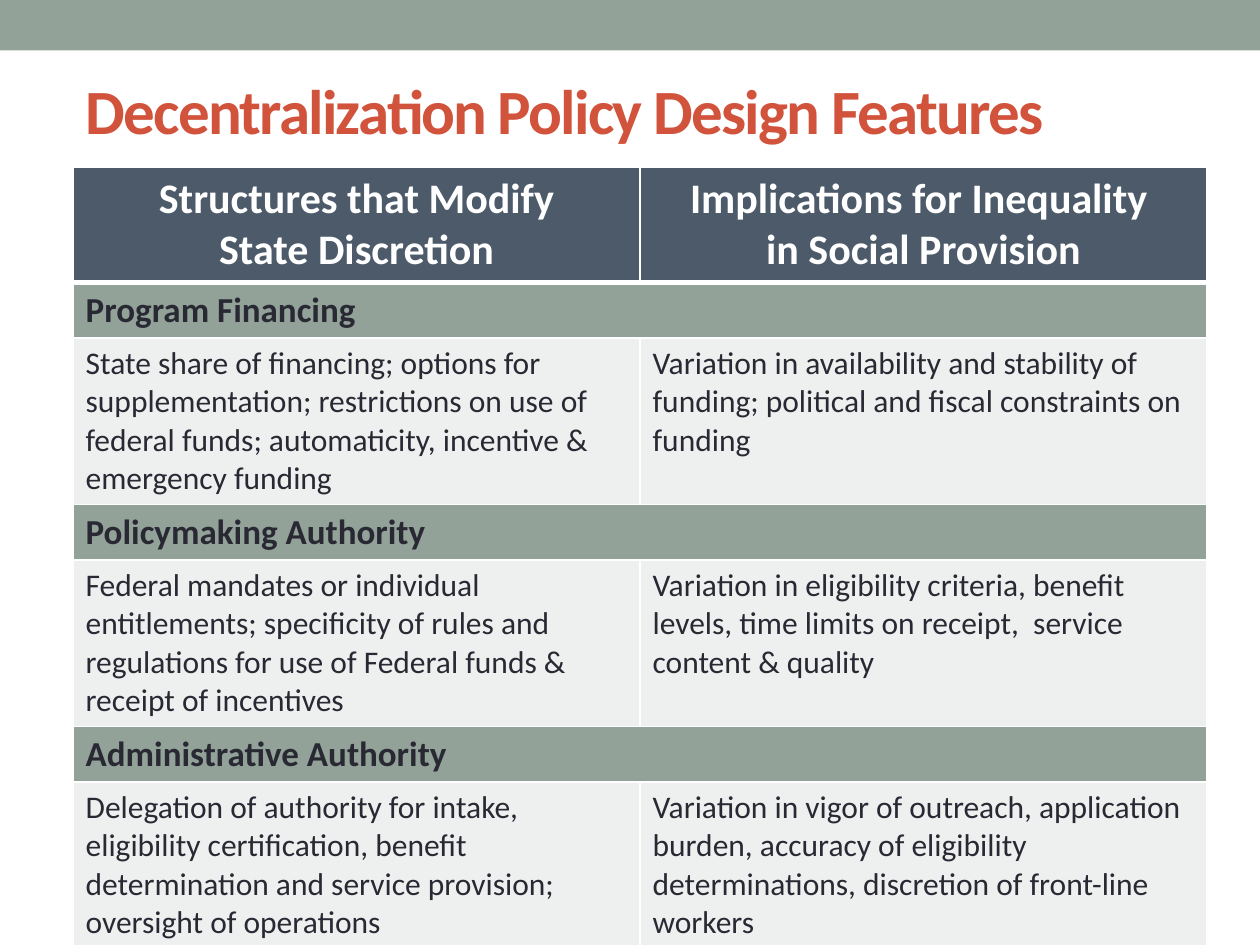
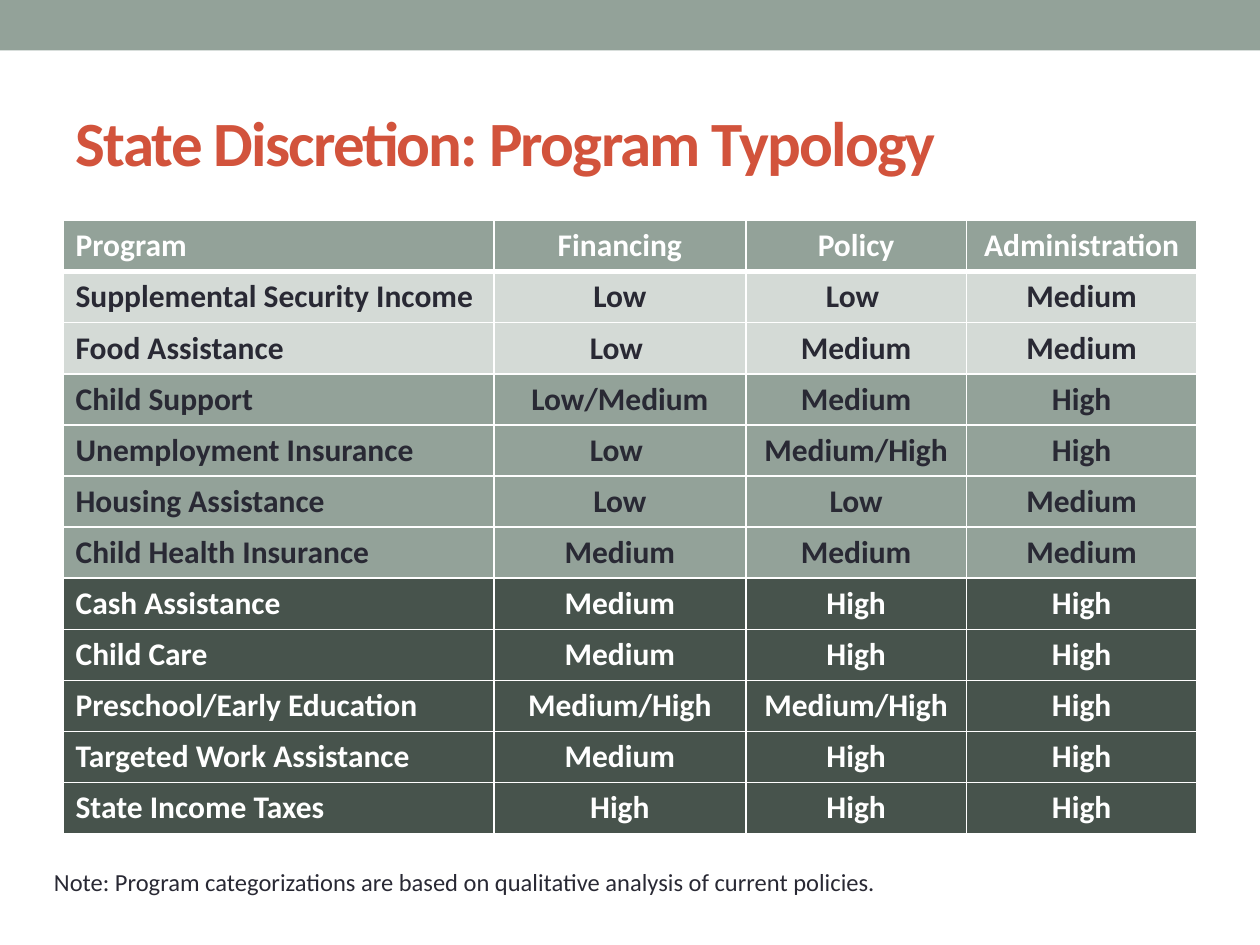
from lxml import etree
from pptx import Presentation
from pptx import util as u
from pptx.dml.color import RGBColor
from pptx.enum import shapes, text
from pptx.oxml import ns

FONT = "Calibri"
WHITE, INK, RED = "FFFFFF", "292934", "D2533C"
SAGE, PALE, MIST, MOSS, SLATE = "93A299", "D4DAD6", "EEF0EF", "47534C", "4C5A6A"
LEFT, MID = text.PP_ALIGN.LEFT, text.PP_ALIGN.CENTER

HEADS = ["Structures that Modify\nState Discretion",
         "Implications for Inequality \nin Social Provision"]
TOPICS = [
    ("Program Financing",
     "State share of financing; options for supplementation; restrictions on use of "
     "federal funds; automaticity, incentive & emergency funding",
     "Variation in availability and stability of funding; political and fiscal "
     "constraints on funding"),
    ("Policymaking Authority",
     "Federal mandates or individual entitlements; specificity of rules and "
     "regulations for use of Federal funds & receipt of incentives",
     "Variation in eligibility criteria, benefit levels, time limits on receipt,  "
     "service content & quality"),
    ("Administrative Authority",
     "Delegation of authority for intake, eligibility certification, benefit "
     "determination and service provision; oversight of operations",
     "Variation in vigor of outreach, application burden, accuracy of eligibility "
     "determinations, discretion of front-line workers"),
]

# Each group of programs: fill, text colour, rows
GROUPS = [
    (SAGE, WHITE, [("Program", "Financing", "Policy", "Administration")]),
    (PALE, INK, [("Supplemental Security Income", "Low", "Low ", "Medium"),
                 ("Food Assistance", "Low ", "Medium", "Medium")]),
    (SAGE, INK, [("Child Support", "Low/Medium", "Medium", "High"),
                 ("Unemployment Insurance", "Low ", "Medium/High", "High"),
                 ("Housing Assistance", "Low", "Low", "Medium"),
                 ("Child Health Insurance", "Medium", "Medium", "Medium")]),
    (MOSS, WHITE, [("Cash Assistance", "Medium", "High", "High"),
                   ("Child Care", "Medium", "High", "High"),
                   ("Preschool/Early Education", "Medium/High", "Medium/High", "High"),
                   ("Targeted Work Assistance", "Medium", "High", "High"),
                   ("State Income Taxes", "High", "High", "High")]),
]


def color(code):
    return RGBColor.from_string(code)


def write(frame, words, size, ink, bold=False, align=LEFT):
    frame.text = words
    for para in frame.paragraphs:
        para.alignment = align
        for run in para.runs:
            font = run.font
            font.name, font.size, font.bold = FONT, u.Pt(size), bold
            font.color.rgb = color(ink)


def place(shape, *box):
    shape.left, shape.top, shape.width, shape.height = map(u.Inches, box)


def add_slide(prs, title, *box):
    """Slide with the top band and a tightly spaced title."""
    slide = prs.slides.add_slide(prs.slide_layouts[5])
    band = slide.shapes.add_shape(shapes.MSO_SHAPE.RECTANGLE, 0, 0,
                                  prs.slide_width, u.Inches(0.4))
    band.shadow.inherit = False
    band.fill.solid()
    band.fill.fore_color.rgb = color(SAGE)
    band.line.fill.background()

    head = slide.shapes.title
    place(head, *box)
    frame = head.text_frame
    frame.auto_size = text.MSO_AUTO_SIZE.NONE
    frame.vertical_anchor = text.MSO_ANCHOR.MIDDLE
    write(frame, title, 36, RED, True)
    for run in frame.paragraphs[0].runs:
        run.font._element.set("spc", "-100")
    return slide


def add_grid(slide, left, top, cols, rows):
    """Empty table with white rules, the heavy one below the header."""
    table = slide.shapes.add_table(
        len(rows), len(cols), u.Inches(left), u.Inches(top),
        u.Inches(sum(cols)), u.Inches(sum(rows))).table
    table.horz_banding = False
    for col, width in zip(table.columns, cols):
        col.width = u.Inches(width)
    for i, (row, height) in enumerate(zip(table.rows, rows)):
        row.height = u.Inches(height)
        for cell in row.cells:
            rule(cell, "LR", 1)
            rule(cell, "T", 3 if i == 1 else 1)
            rule(cell, "B", 3 if i == 0 else 1)
    return table


def rule(cell, sides, width):
    props = cell._tc.get_or_add_tcPr()
    for side in sides:
        line = etree.SubElement(props, ns.qn("a:ln" + side), w=str(u.Pt(width)))
        fill = etree.SubElement(line, ns.qn("a:solidFill"))
        etree.SubElement(fill, ns.qn("a:srgbClr"), val=WHITE)


def fill_cell(cell, words, fill, *style):
    cell.fill.solid()
    cell.fill.fore_color.rgb = color(fill)
    write(cell.text_frame, words, *style)


def add_note(slide, words, *box):
    note = slide.shapes.add_textbox(*map(u.Inches, box))
    note.text_frame.word_wrap = True
    write(note.text_frame, words, 14, INK)


def features(prs):
    slide = add_slide(prs, "Decentralization Policy Design Features",
                      0.58, 0.33, 9.17, 1.08)
    table = add_grid(slide, 0.58, 1.33, [4.5] * 2, [0.89] + [0.43, 1.28] * len(TOPICS))
    for j, head in enumerate(HEADS):
        fill_cell(table.cell(0, j), head, SLATE, 24, WHITE, True, MID)
    for i, (topic, *details) in enumerate(TOPICS):
        row = 1 + 2 * i
        band = table.cell(row, 0)
        band.merge(table.cell(row, 1))
        fill_cell(band, topic, SAGE, 20, INK, True)
        for j, detail in enumerate(details):
            fill_cell(table.cell(row + 1, j), detail, MIST, 18, INK)


def typology(prs):
    slide = add_slide(prs, "State Discretion: Program Typology", 0.5, 0.58, 9, 1.08)
    lines = [(fill, ink, row) for fill, ink, rows in GROUPS for row in rows]
    table = add_grid(slide, 0.5, 1.75, [3.42, 2, 1.75, 1.83], [4.87 / len(lines)] * len(lines))
    for i, (fill, ink, row) in enumerate(lines):
        for j, words in enumerate(row):
            fill_cell(table.cell(i, j), words, fill, 18, ink, True, MID if j else LEFT)
    add_note(slide, "Note: Program categorizations are based on qualitative analysis "
             "of current policies.", 0.33, 6.83, 9.25, 0.34)


def main():
    prs = Presentation()
    prs.slide_width, prs.slide_height = u.Inches(10), u.Inches(7.5)
    features(prs)
    typology(prs)
    prs.save("out.pptx")


if __name__ == "__main__":
    main()
